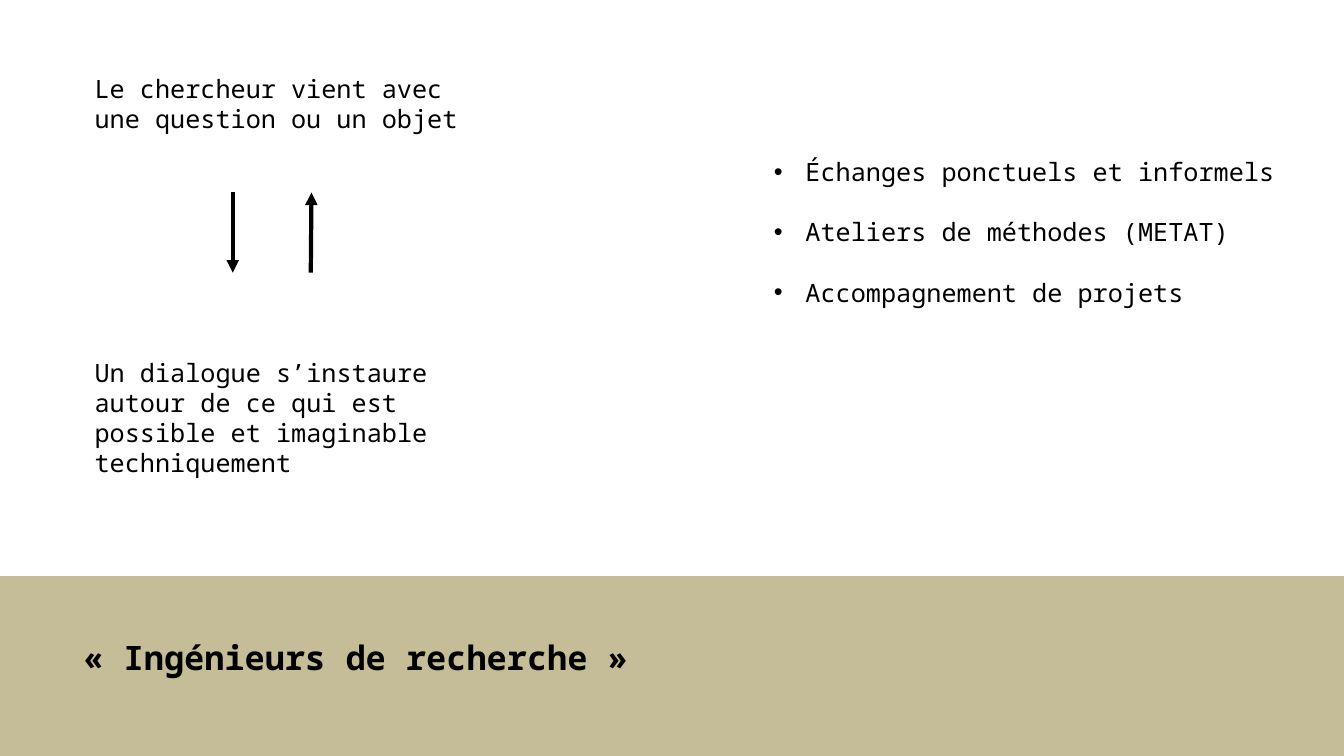
from lxml import etree
from pptx import Presentation
from pptx import util as u
from pptx.dml.color import RGBColor
from pptx.enum import shapes, text
from pptx.oxml.ns import qn

BLACK = RGBColor(0x00, 0x00, 0x00)
WHITE = RGBColor(0xFF, 0xFF, 0xFF)
SAND = RGBColor(0xC4, 0xBD, 0x97)

WIDTH, HEIGHT = 960, 540


class SlideBuilder:
    font_name = "Noto Sans Mono"
    text_size = 18
    bullet_indent = 22.5
    item_gap = 21.5

    def __init__(self, slide):
        self.slide = slide
        slide.background.fill.solid()
        slide.background.fill.fore_color.rgb = WHITE

    def band(self, left, top, width, height):
        shape = self.slide.shapes.add_shape(
            shapes.MSO_SHAPE.RECTANGLE, u.Pt(left), u.Pt(top), u.Pt(width), u.Pt(height))
        shape.shadow.inherit = False
        shape.fill.solid()
        shape.fill.fore_color.rgb = SAND
        shape.line.color.rgb = SAND
        shape.line.width = u.Pt(2)

    def text_box(self, left, top, width, height, lines, size=text_size, bold=False, bullets=False):
        box = self.slide.shapes.add_textbox(u.Pt(left), u.Pt(top), u.Pt(width), u.Pt(height))
        frame = box.text_frame
        frame.word_wrap = True
        frame.vertical_anchor = text.MSO_ANCHOR.TOP
        for index, line in enumerate(lines):
            paragraph = frame.add_paragraph() if index else frame.paragraphs[0]
            paragraph.text = line
            if bullets:
                self.add_bullet(paragraph)
            if index:
                paragraph.space_before = u.Pt(self.item_gap)
            font = paragraph.font
            font.name = self.font_name
            font.size = u.Pt(size)
            font.bold = bold
            font.color.rgb = BLACK

    def add_bullet(self, paragraph):
        properties = paragraph._p.get_or_add_pPr()
        properties.set("marL", str(u.Pt(self.bullet_indent)))
        properties.set("indent", str(-u.Pt(self.bullet_indent)))
        etree.SubElement(properties, qn("a:buFont")).set("typeface", "Arial")
        etree.SubElement(properties, qn("a:buChar")).set("char", "•")

    def arrow(self, start_x, start_y, end_x, end_y):
        connector = self.slide.shapes.add_connector(
            shapes.MSO_CONNECTOR.STRAIGHT,
            u.Pt(start_x), u.Pt(start_y), u.Pt(end_x), u.Pt(end_y))
        connector.line.color.rgb = BLACK
        connector.line.width = u.Pt(3)
        line = connector.line._get_or_add_ln()
        etree.SubElement(line, qn("a:tailEnd")).set("type", "triangle")
        etree.SubElement(connector._element.spPr, qn("a:effectLst"))


def main():
    presentation = Presentation()
    presentation.slide_width = u.Pt(WIDTH)
    presentation.slide_height = u.Pt(HEIGHT)
    builder = SlideBuilder(presentation.slides.add_slide(presentation.slide_layouts[6]))

    # Title band
    builder.band(0, 412.5, WIDTH, 127)
    builder.text_box(52.5, 451.5, 407, 36, ["« Ingénieurs de recherche »"], size=24, bold=True)

    # Dialogue between researcher and engineers
    builder.text_box(60.5, 48.5, 291, 50, ["Le chercheur vient avec une question ou un objet"])
    builder.text_box(60.5, 251.5, 322, 72, [
        "Un dialogue s’instaure autour de ce qui est possible et imaginable techniquement"])
    arrow_top, arrow_bottom = 137.5, 194.75
    builder.arrow(166.25, arrow_top, 166.25, arrow_bottom)
    builder.arrow(222, arrow_bottom, 222.5, arrow_top)

    # Forms of support
    builder.text_box(545.75, 108, 374, 115, [
        "Échanges ponctuels et informels",
        "Ateliers de méthodes (METAT)",
        "Accompagnement de projets",
    ], bullets=True)

    presentation.save("out.pptx")


if __name__ == "__main__":
    main()
